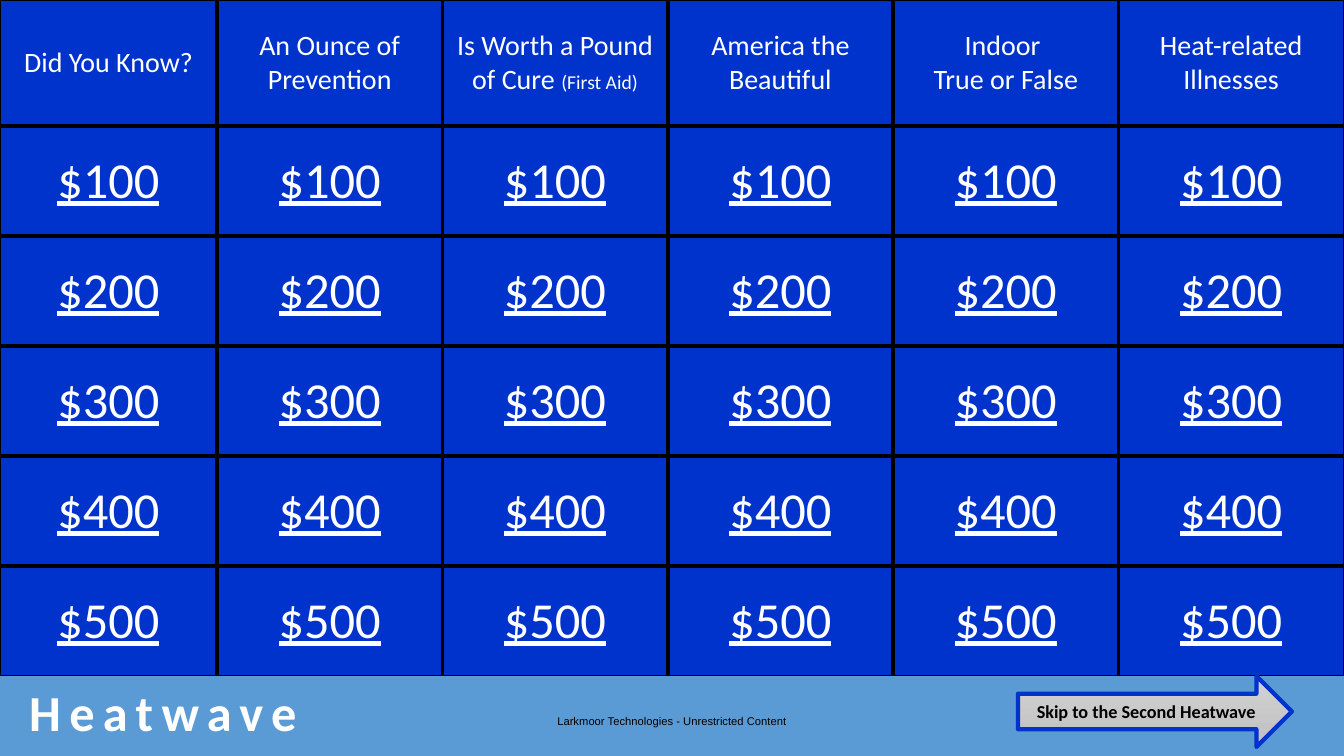
"""Builds the Heatwave quiz board slide."""
from dataclasses import dataclass

from lxml import etree
from pptx import Presentation
from pptx.dml.color import RGBColor
from pptx.enum.shapes import MSO_SHAPE
from pptx.enum.text import MSO_ANCHOR, MSO_AUTO_SIZE, PP_ALIGN
from pptx.oxml.ns import qn
from pptx.util import Emu, Pt

CENTER, LEFT = PP_ALIGN.CENTER, PP_ALIGN.LEFT
MIDDLE = MSO_ANCHOR.MIDDLE
RIGHT_ARROW = MSO_SHAPE.RIGHT_ARROW
NO_AUTOFIT = MSO_AUTO_SIZE.NONE


@dataclass(frozen=True)
class Theme:
    """Colours, fonts and type sizes of the slide."""
    sky: str = "5B9BD5"
    board: str = "0033CC"
    light: str = "FFFFFF"
    dark: str = "000000"
    arrow_top: str = "D2D2D2"
    arrow_bottom: str = "C0C0C0"
    font: str = "Calibri"
    footer_font: str = "Arial"
    display_size: int = 36
    category_size: int = 20
    note_size: int = 14
    button_size: int = 13
    footer_size: int = 8


theme = Theme()
PIXEL = 914400 / 100.8
SLIDE_WIDTH, SLIDE_HEIGHT = 1344, 756
FIRST_COLUMN, HEADER_HEIGHT, PRICE_HEIGHT = 217, 126, 110
OUTER_LINE, INNER_LINE = 1, 3
CATEGORIES = [
    [[("Did You Know?", theme.category_size)]],
    [[("An Ounce of Prevention", theme.category_size)]],
    [[("Is Worth a Pound of Cure ", theme.category_size), ("(First Aid)", theme.note_size)]],
    [[("America the Beautiful", theme.category_size)]],
    [[("Indoor ", theme.category_size)], [("True or False", theme.category_size)]],
    [[("Heat-related Illnesses", theme.category_size)]],
]
PRICES = ["$100", "$200", "$300", "$400", "$500"]


def px(length):
    return Emu(round(length * PIXEL))


def add_run(paragraph, text, size, color, align=CENTER, font=theme.font, bold=False, underline=False):
    paragraph.alignment = align
    run = paragraph.add_run()
    run.text = text
    run.font.name = font
    run.font.size = Pt(size)
    run.font.bold = bold
    run.font.underline = underline
    run.font.color.rgb = RGBColor.from_string(color)
    return run


presentation = Presentation()
presentation.slide_width, presentation.slide_height = px(SLIDE_WIDTH), px(SLIDE_HEIGHT)
slide = presentation.slides.add_slide(presentation.slide_layouts[5])
slide.background.fill.solid()
slide.background.fill.fore_color.rgb = RGBColor.from_string(theme.sky)

row_count, column_count = len(PRICES) + 1, len(CATEGORIES)
board_height = HEADER_HEIGHT + PRICE_HEIGHT * len(PRICES)
board = slide.shapes.add_table(row_count, column_count, 0, 0, px(SLIDE_WIDTH), px(board_height)).table
for index, column in enumerate(board.columns):
    column.width = px((SLIDE_WIDTH - FIRST_COLUMN) / (column_count - 1) if index else FIRST_COLUMN)
for index, row in enumerate(board.rows):
    row.height = px(PRICE_HEIGHT if index else HEADER_HEIGHT)

for row_index in range(row_count):
    for column_index, category in enumerate(CATEGORIES):
        cell = board.cell(row_index, column_index)
        cell.vertical_anchor = MIDDLE
        cell.fill.solid()
        cell.fill.fore_color.rgb = RGBColor.from_string(theme.board)
        lines = [[(PRICES[row_index - 1], theme.display_size)]] if row_index else category
        for line_index, line in enumerate(lines):
            paragraph = cell.text_frame.add_paragraph() if line_index else cell.text_frame.paragraphs[0]
            for text, size in line:
                add_run(paragraph, text, size, theme.light, underline=row_index > 0)
        outer_edges = {
            "a:lnL": column_index == 0,
            "a:lnR": column_index == column_count - 1,
            "a:lnT": row_index == 0,
            "a:lnB": row_index == row_count - 1,
        }
        cell_properties = cell._tc.get_or_add_tcPr()
        for position, (edge, is_outer) in enumerate(outer_edges.items()):
            border = etree.Element(qn(edge), w=str(Pt(OUTER_LINE if is_outer else INNER_LINE)))
            border_fill = etree.SubElement(border, qn("a:solidFill"))
            etree.SubElement(border_fill, qn("a:srgbClr"), val=theme.dark)
            cell_properties.insert(position, border)

title = slide.shapes.title
title.left, title.top, title.width, title.height = px(19), px(675), px(489), px(72)
title.text_frame.auto_size = NO_AUTOFIT
title.text_frame.vertical_anchor = MIDDLE
title_run = add_run(title.text_frame.paragraphs[0], "Heatwave", theme.display_size, theme.light,
                    align=LEFT, bold=True)
title_run._r.get_or_add_rPr().set("spc", "600")

skip_arrow = slide.shapes.add_shape(RIGHT_ARROW, px(1018), px(676), px(274), px(71))
skip_arrow.shadow.inherit = False
skip_arrow.fill.gradient()
skip_arrow.fill.gradient_angle = 270
for stop, color in zip(skip_arrow.fill.gradient_stops, (theme.arrow_top, theme.arrow_bottom)):
    stop.color.rgb = RGBColor.from_string(color)
skip_arrow.fill.gradient_stops[0].position = 0
skip_arrow.fill.gradient_stops[1].position = 1
skip_arrow.line.color.rgb = RGBColor.from_string(theme.board)
skip_arrow.line.width = Pt(INNER_LINE)
skip_arrow.text_frame.word_wrap = False
skip_arrow.text_frame.vertical_anchor = MIDDLE
add_run(skip_arrow.text_frame.paragraphs[0], "Skip to the Second Heatwave", theme.button_size,
        theme.dark, bold=True)

footer = slide.shapes.add_textbox(0, px(701), px(SLIDE_WIDTH), px(40))
footer.text_frame.word_wrap = True
footer.text_frame.vertical_anchor = MIDDLE
add_run(footer.text_frame.paragraphs[0], "Larkmoor Technologies - Unrestricted Content",
        theme.footer_size, theme.dark, font=theme.footer_font)

presentation.save("out.pptx")
